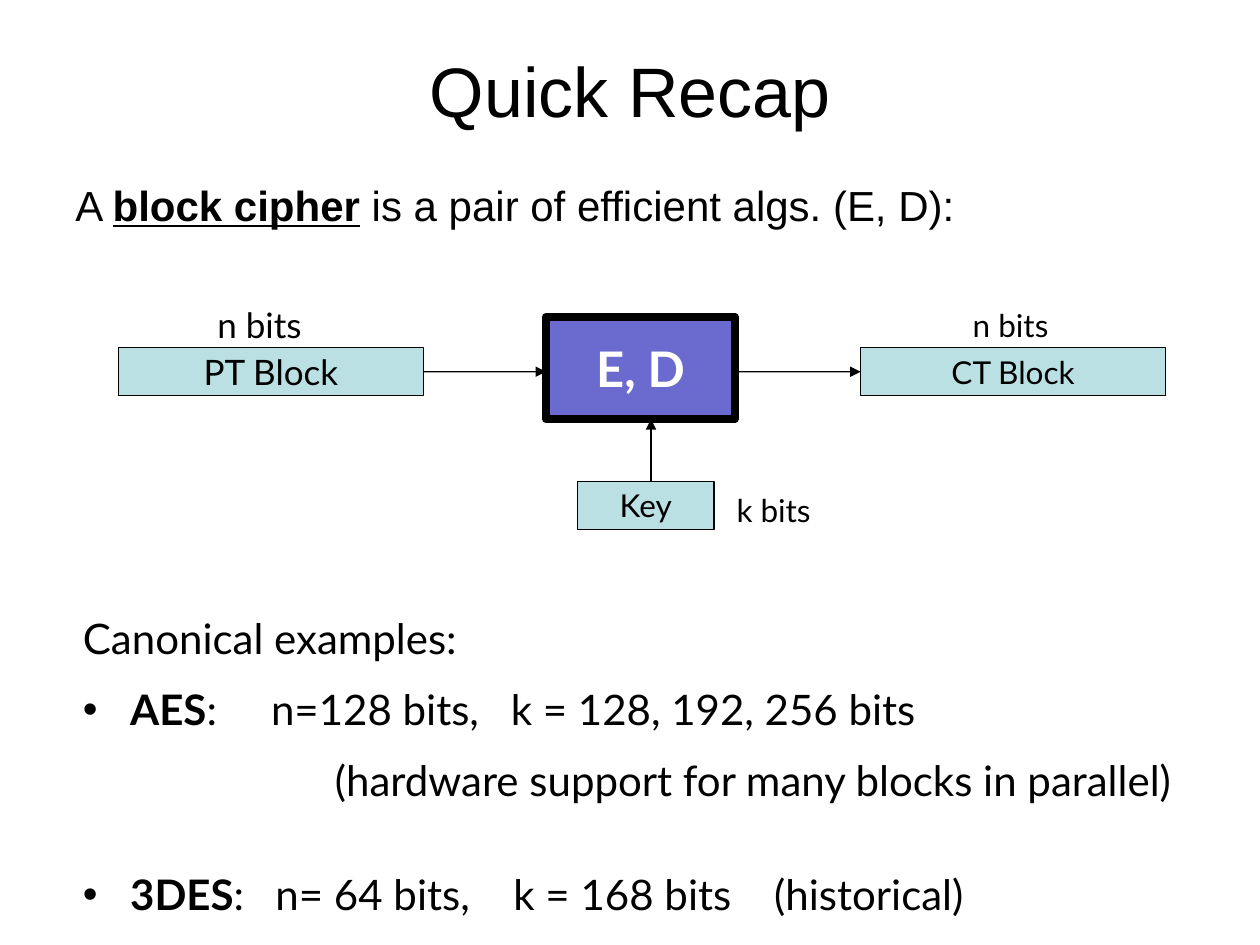
from dataclasses import dataclass
from typing import Optional

from lxml import etree
from pptx import Presentation
from pptx.dml.color import RGBColor
from pptx.enum import shapes, text
from pptx.oxml.ns import qn
from pptx.util import Pt

COLORS = {"ink": "000000", "white": "FFFFFF", "cipher": "6B6BCF", "data": "BBE0E3"}
ROW_Y, ROW_H = 198.7, 27.4
MID_Y = ROW_Y + ROW_H / 2


@dataclass
class Block:
    label: str
    left: float
    top: float
    width: float
    height: float = ROW_H
    size: float = 18
    fill: str = "data"
    ink: str = "ink"
    border: float = 0.75
    bold: bool = False


@dataclass
class Caption:
    label: str
    left: float
    top: float
    width: float
    height: float = 28.8
    size: float = 18


@dataclass
class Example:
    detail: str
    name: str = ""
    indent: float = 0
    before: float = 12
    tabs: tuple[float, ...] = ()


def color(name: str) -> RGBColor:
    return RGBColor.from_string(COLORS[name])


def style(run, size: float, face: str = "Lato", ink: str = "ink", bold: bool = False) -> None:
    run.font.size, run.font.name, run.font.bold = Pt(size), face, bold
    run.font.color.rgb = color(ink)


def draw_block(slide, block: Block):
    box = slide.shapes.add_shape(shapes.MSO_SHAPE.RECTANGLE, Pt(block.left), Pt(block.top),
                                 Pt(block.width), Pt(block.height))
    box.shadow.inherit = False
    box.fill.solid()
    box.fill.fore_color.rgb = color(block.fill)
    box.line.color.rgb = color("ink")
    box.line.width = Pt(block.border)
    frame = box.text_frame
    frame.text = block.label
    frame.word_wrap = False
    frame.vertical_anchor = text.MSO_ANCHOR.MIDDLE
    frame.paragraphs[0].alignment = text.PP_ALIGN.CENTER
    style(frame.paragraphs[0].runs[0], block.size, ink=block.ink, bold=block.bold)
    return box


def add_frame(slide, left: float, top: float, width: float, height: float, wrap: bool = True):
    frame = slide.shapes.add_textbox(Pt(left), Pt(top), Pt(width), Pt(height)).text_frame
    frame.word_wrap = wrap
    return frame


def draw_caption(slide, caption: Caption) -> None:
    frame = add_frame(slide, caption.left, caption.top, caption.width, caption.height, False)
    frame.text = caption.label
    frame.paragraphs[0].alignment = text.PP_ALIGN.CENTER
    style(frame.paragraphs[0].runs[0], caption.size)


def draw_arrow(slide, x1: float, y1: float, x2: float, y2: float):
    arrow = slide.shapes.add_connector(shapes.MSO_CONNECTOR.STRAIGHT, Pt(x1), Pt(y1), Pt(x2), Pt(y2))
    arrow.line.color.rgb = color("ink")
    arrow.line.width = Pt(0.75)
    etree.SubElement(arrow.line._get_or_add_ln(), qn("a:tailEnd"), type="triangle")
    etree.SubElement(arrow._element.spPr, qn("a:effectLst"))
    return arrow


def write_example(paragraph, example: Example) -> None:
    paragraph.space_before = Pt(example.before)
    paragraph.text = example.name + example.detail
    if example.name:
        paragraph.text = example.name
        paragraph.add_run().text = example.detail
    for run in paragraph.runs:
        style(run, 24, bold=run.text == example.name)
    props = paragraph._p.get_or_add_pPr()
    props.set("marL", str(Pt(example.indent)))
    if example.name:
        props.set("indent", str(Pt(-example.indent)))
        etree.SubElement(props, qn("a:buFont"), typeface="Arial")
        etree.SubElement(props, qn("a:buChar"), char="•")
    if example.tabs:
        stops = etree.SubElement(props, qn("a:tabLst"))
        for stop in example.tabs:
            etree.SubElement(stops, qn("a:tab"), pos=str(Pt(stop)), algn="l")


def main() -> None:
    deck = Presentation()
    deck.slide_width, deck.slide_height = Pt(720), Pt(540)
    slide = deck.slides.add_slide(deck.slide_layouts[5])

    # Title
    title = slide.shapes.title
    title.left, title.top, title.width, title.height = Pt(36), Pt(18), Pt(648), Pt(66)
    title.text_frame.text = "Quick Recap"
    title.text_frame.vertical_anchor = text.MSO_ANCHOR.MIDDLE
    title.text_frame.paragraphs[0].alignment = text.PP_ALIGN.CENTER
    style(title.text_frame.paragraphs[0].runs[0], 40, "Arial")

    # Definition
    definition = add_frame(slide, 36, 99, 648, 40).paragraphs[0]
    for words, is_term in (("A ", False), ("block cipher", True),
                           (" is a pair of efficient algs. (E, D):", False)):
        run = definition.add_run()
        run.text = words
        style(run, 24, "Arial", bold=is_term)
        run.font.underline = is_term

    # Cipher diagram
    cipher = Block("E, D", 312, 181, 108, 58.5, 28, "cipher", "white", 4.5, True)
    key = Block("Key", 330, 275, 78)
    draw_block(slide, cipher)
    plaintext = draw_block(slide, Block("PT Block", 67.7, ROW_Y, 174.2, size=20))
    ciphertext = draw_block(slide, Block("CT Block", 491.8, ROW_Y, 174.2))
    draw_block(slide, key)
    for caption in (Caption("n bits", 116.6, 170, 63.4, 31.5, 20),
                    Caption("n bits", 548, 171.4, 59),
                    Caption("k bits", 413.3, 277.2, 57.6)):
        draw_caption(slide, caption)

    cipher_right = cipher.left + cipher.width
    draw_arrow(slide, 240, MID_Y, cipher.left, MID_Y).begin_connect(plaintext, 3)
    draw_arrow(slide, cipher_right, MID_Y, 491.8, MID_Y).end_connect(ciphertext, 1)
    draw_arrow(slide, 372, key.top, 372, cipher.top + cipher.height)

    # Canonical examples
    examples: Optional[object] = add_frame(slide, 40.3, 346.3, 655, 184.3)
    for i, example in enumerate((
            Example("Canonical examples:", before=0),
            Example(":\tn=128 bits,\tk = 128, 192, 256 bits", "AES", 27, tabs=(107.5, 244.5)),
            Example("(hardware support for many blocks in parallel)", indent=144),
            Example(":\tn= 64 bits,\tk = 168 bits\t(historical)", "3DES", 27, 36,
                    (110, 246, 395)))):
        write_example(examples.paragraphs[0] if i == 0 else examples.add_paragraph(), example)

    deck.save("out.pptx")


if __name__ == "__main__":
    main()
